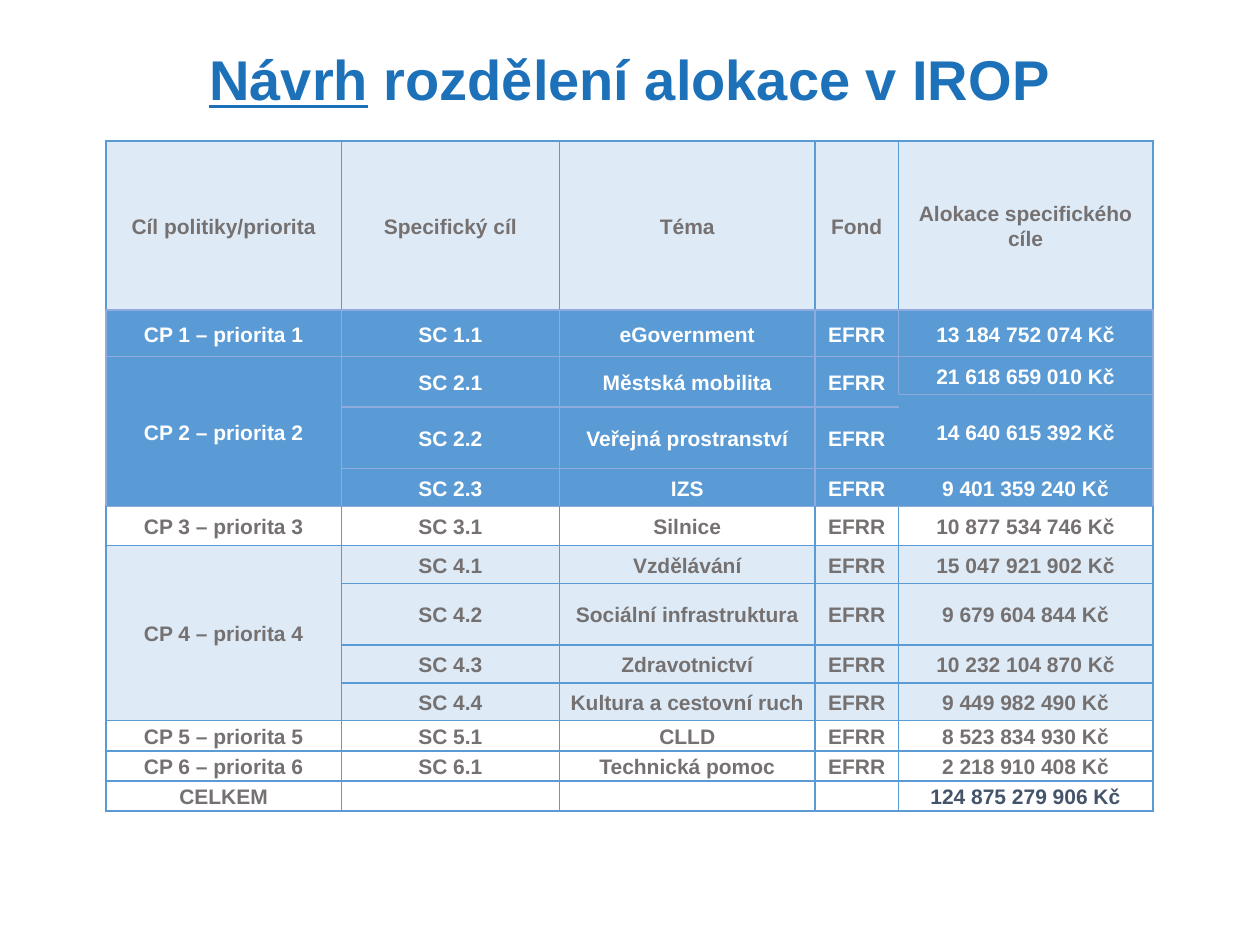
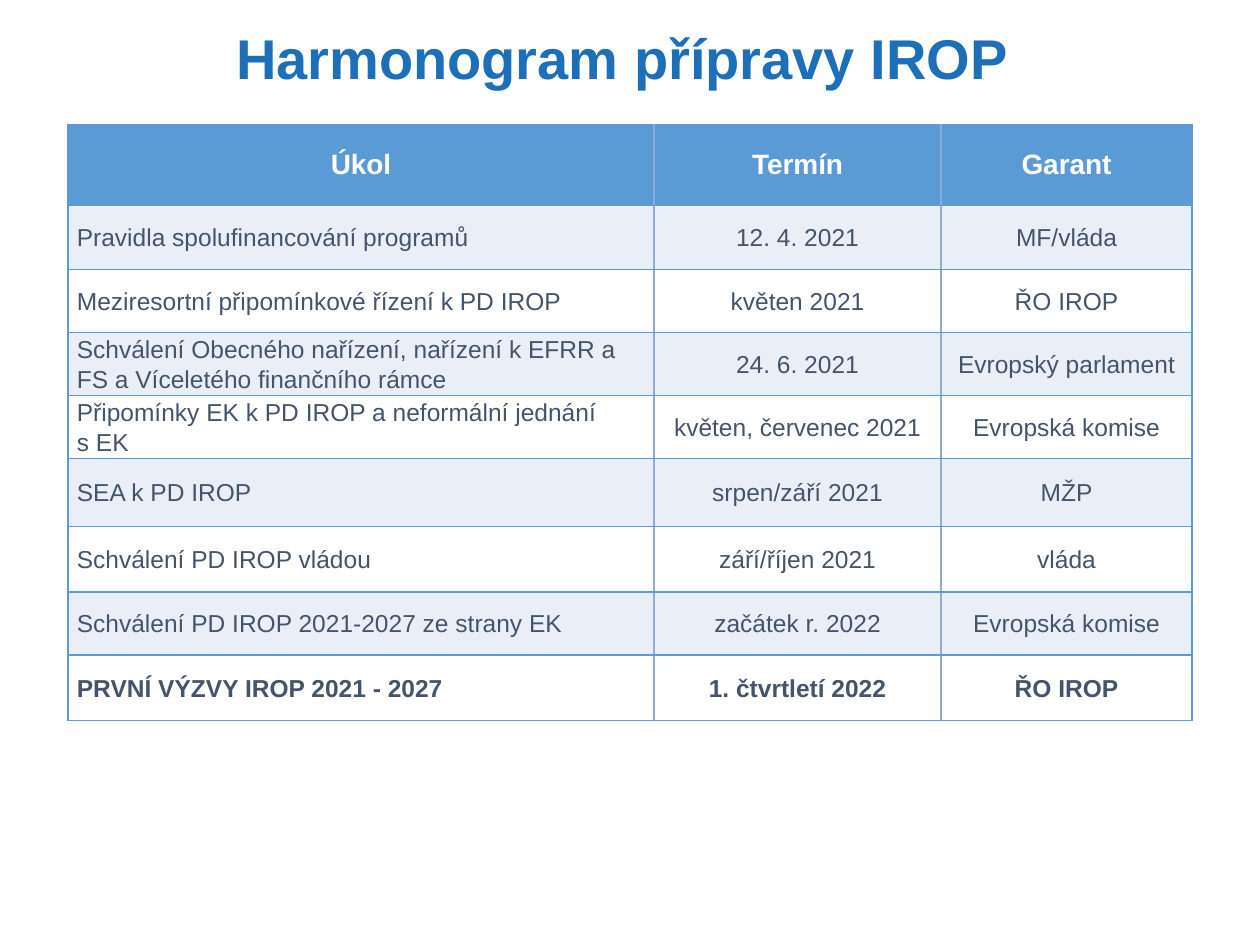
from lxml import etree
from pptx import Presentation
from pptx.dml.color import RGBColor
from pptx.enum.text import MSO_ANCHOR, PP_ALIGN
from pptx.oxml.ns import qn
from pptx.util import Inches, Pt

MIDDLE = MSO_ANCHOR.MIDDLE
CENTER, LEFT = PP_ALIGN.CENTER, PP_ALIGN.LEFT

BLUE, SOFT_BLUE, PALE_BLUE, BAND = "5B9BD5", "8FAADC", "DEEBF7", "EAEFF7"
WHITE, GREY, NAVY = "FFFFFF", "767171", "44546A"
TITLE_BLUE = "1D71B8"
FONT = "Arial"
TITLE_FORMAT = {"size": Pt(32), "name": FONT, "bold": True}

ALLOCATION_ROWS = [
    ["Cíl politiky/priorita", "Specifický cíl", "Téma", "Fond", "Alokace specifického cíle"],
    ["CP 1 – priorita 1", "SC 1.1", "eGovernment", "EFRR", "13 184 752 074 Kč"],
    ["CP 2 – priorita 2", "SC 2.1", "Městská mobilita", "EFRR", "21 618 659 010 Kč"],
    [None, None, None, None, "14 640 615 392 Kč"],
    [None, "SC 2.2", "Veřejná prostranství", "EFRR", None],
    [None, "SC 2.3", "IZS", "EFRR", "9 401 359 240 Kč"],
    ["CP 3 – priorita 3", "SC 3.1", "Silnice", "EFRR", "10 877 534 746 Kč"],
    ["CP 4 – priorita 4", "SC 4.1", "Vzdělávání", "EFRR", "15 047 921 902 Kč"],
    [None, "SC 4.2", "Sociální infrastruktura", "EFRR", "9 679 604 844 Kč"],
    [None, "SC 4.3", "Zdravotnictví", "EFRR", "10 232 104 870 Kč"],
    [None, "SC 4.4", "Kultura a cestovní ruch", "EFRR", "9 449 982 490 Kč"],
    ["CP 5 – priorita 5", "SC 5.1", "CLLD", "EFRR", "8 523 834 930 Kč"],
    ["CP 6 – priorita 6", "SC 6.1", "Technická pomoc", "EFRR", "2 218 910 408 Kč"],
    ["CELKEM", "", "", "", "124 875 279 906 Kč"],
]
ALLOCATION_HEIGHTS = [1.34, 0.37, 0.3, 0.1, 0.49, 0.3, 0.31, 0.3, 0.49, 0.3, 0.3, 0.24, 0.24, 0.24]
ALLOCATION_FILLS = [PALE_BLUE] + [BLUE] * 5 + [WHITE] + [PALE_BLUE] * 4 + [WHITE] * 3

SCHEDULE_ROWS = [
    ["Úkol", "Termín", "Garant"],
    ["Pravidla spolufinancování programů", "12. 4. 2021", "MF/vláda"],
    ["Meziresortní připomínkové řízení k PD IROP", "květen 2021", "ŘO IROP"],
    ["Schválení Obecného nařízení, nařízení k EFRR a FS a Víceletého finančního rámce",
     "24. 6. 2021", "Evropský parlament"],
    ["Připomínky EK k PD IROP a neformální jednání\vs EK", "květen, červenec 2021", "Evropská komise"],
    ["SEA k PD IROP", "srpen/září 2021", "MŽP"],
    ["Schválení PD IROP vládou", "září/říjen 2021", "vláda"],
    ["Schválení PD IROP 2021-2027 ze strany EK", "začátek r. 2022", "Evropská komise"],
    ["PRVNÍ VÝZVY IROP 2021 - 2027", "1. čtvrtletí 2022", "ŘO IROP"],
]
SCHEDULE_HEIGHTS = [0.64, 0.51, 0.5, 0.48, 0.48, 0.54, 0.52, 0.5, 0.52]


def color(value):
    return RGBColor.from_string(value)


def set_attributes(target, values):
    for name, value in values.items():
        setattr(target, name, value)


def format_font(font, values, font_color):
    set_attributes(font, values)
    font.color.rgb = color(font_color)


def allocation_style(row, column):
    fill = ALLOCATION_FILLS[row]
    font_color = WHITE if fill == BLUE else GREY
    if row == len(ALLOCATION_ROWS) - 1 and column == 4:
        font_color = NAVY
    return {"fill": fill, "color": font_color, "size": 12, "bold": True, "align": CENTER, "spacing": 1.07}


def allocation_border(row, column, side):
    if 3 <= row <= 5 and (column, side) in ((3, "R"), (4, "L")):
        return BLUE
    neighbor = row + {"T": -1, "B": 1}.get(side, 0)
    neighbor = min(max(neighbor, 0), len(ALLOCATION_FILLS) - 1)
    return SOFT_BLUE if BLUE in (ALLOCATION_FILLS[row], ALLOCATION_FILLS[neighbor]) else BLUE


def schedule_style(row, column):
    if row == 0:
        return {"fill": BLUE, "color": WHITE, "size": 16, "bold": True, "align": CENTER, "spacing": 1.0}
    return {"fill": BAND if row % 2 else WHITE, "color": NAVY, "size": 14,
            "bold": row == len(SCHEDULE_ROWS) - 1,
            "align": CENTER if column else LEFT, "spacing": 1.07}


def schedule_border(row, column, side):
    inner = (side == "L" and column > 0) or (side == "R" and column < 2)
    return SOFT_BLUE if inner else BLUE


class Deck:
    def __init__(self):
        self.presentation = Presentation()
        self.presentation.slide_width = Inches(10)
        self.presentation.slide_height = Inches(7.5)
        self.slide = None

    def add_slide(self):
        self.slide = self.presentation.slides.add_slide(self.presentation.slide_layouts[6])

    def title(self, parts, top, height, title_color=TITLE_BLUE, right=0.1, bottom=0.05):
        shape = self.slide.shapes.add_textbox(Inches(0.69), Inches(top), Inches(8.62), Inches(height))
        set_attributes(shape.text_frame, {
            "word_wrap": True, "vertical_anchor": MIDDLE,
            "margin_right": Inches(right), "margin_bottom": Inches(bottom)})
        paragraph = shape.text_frame.paragraphs[0]
        set_attributes(paragraph, {"alignment": CENTER, "line_spacing": 0.9})
        for text, underline in parts:
            run = paragraph.add_run()
            run.text = text
            format_font(run.font, {**TITLE_FORMAT, "underline": underline}, title_color)

    def table(self, left, top, widths, heights, rows, style, border, margins):
        frame = self.slide.shapes.add_table(
            len(rows), len(widths), Inches(left), Inches(top),
            Inches(sum(widths)), Inches(sum(heights)))
        table = frame.table
        set_attributes(table, {"first_row": False, "horz_banding": False})
        for column, width in zip(table.columns, widths):
            column.width = Inches(width)
        for row, height in zip(table.rows, heights):
            row.height = Inches(height)
        for row, texts in enumerate(rows):
            for column, text in enumerate(texts):
                cell = table.cell(row, column)
                set_attributes(cell, {"vertical_anchor": MIDDLE, **margins})
                for side in "LRTB":
                    self.border(cell, side, border(row, column, side))
                self.cell_text(cell, text, style(row, column))
        self.merge_downwards(table, rows)

    def border(self, cell, side, line_color):
        line = etree.SubElement(cell._tc.get_or_add_tcPr(), qn(f"a:ln{side}"), w=str(Pt(1)))
        fill = etree.SubElement(line, qn("a:solidFill"))
        etree.SubElement(fill, qn("a:srgbClr"), val=line_color)

    def cell_text(self, cell, text, style):
        cell.fill.solid()
        cell.fill.fore_color.rgb = color(style["fill"])
        paragraph = cell.text_frame.paragraphs[0]
        set_attributes(paragraph, {"alignment": style["align"], "line_spacing": style["spacing"]})
        if not text:
            etree.SubElement(paragraph._p, qn("a:endParaRPr"), sz=str(style["size"] * 100))
            return
        paragraph.text = text
        for run in paragraph.runs:
            format_font(run.font, {"size": Pt(style["size"]), "name": FONT, "bold": style["bold"]},
                        style["color"])

    def merge_downwards(self, table, rows):
        for column, texts in enumerate(zip(*rows)):
            starts = [row for row, text in enumerate(texts) if text is not None]
            for start, following in zip(starts, starts[1:] + [len(texts)]):
                if following - start > 1:
                    table.cell(start, column).merge(table.cell(following - 1, column))


def main():
    deck = Deck()

    deck.add_slide()
    deck.title([("Návrh", True), (" rozdělení alokace v IROP", False)], 0.19, 0.93)
    tight = Inches(0.01)
    deck.table(0.84, 1.12, [1.87, 1.73, 2.03, 0.66, 2.02], ALLOCATION_HEIGHTS, ALLOCATION_ROWS,
               allocation_style, allocation_border,
               {"margin_left": tight, "margin_right": tight, "margin_top": tight, "margin_bottom": 0})

    deck.add_slide()
    deck.title([("Harmonogram přípravy IROP", False)], 0.06, 1.37, "1D70B8", right=0.22, bottom=0.57)
    side = Inches(0.07)
    deck.table(0.54, 0.99, [4.65, 2.28, 1.99], SCHEDULE_HEIGHTS, SCHEDULE_ROWS,
               schedule_style, schedule_border,
               {"margin_left": side, "margin_right": side, "margin_top": 0, "margin_bottom": 0})

    deck.presentation.save("out.pptx")


if __name__ == "__main__":
    main()
